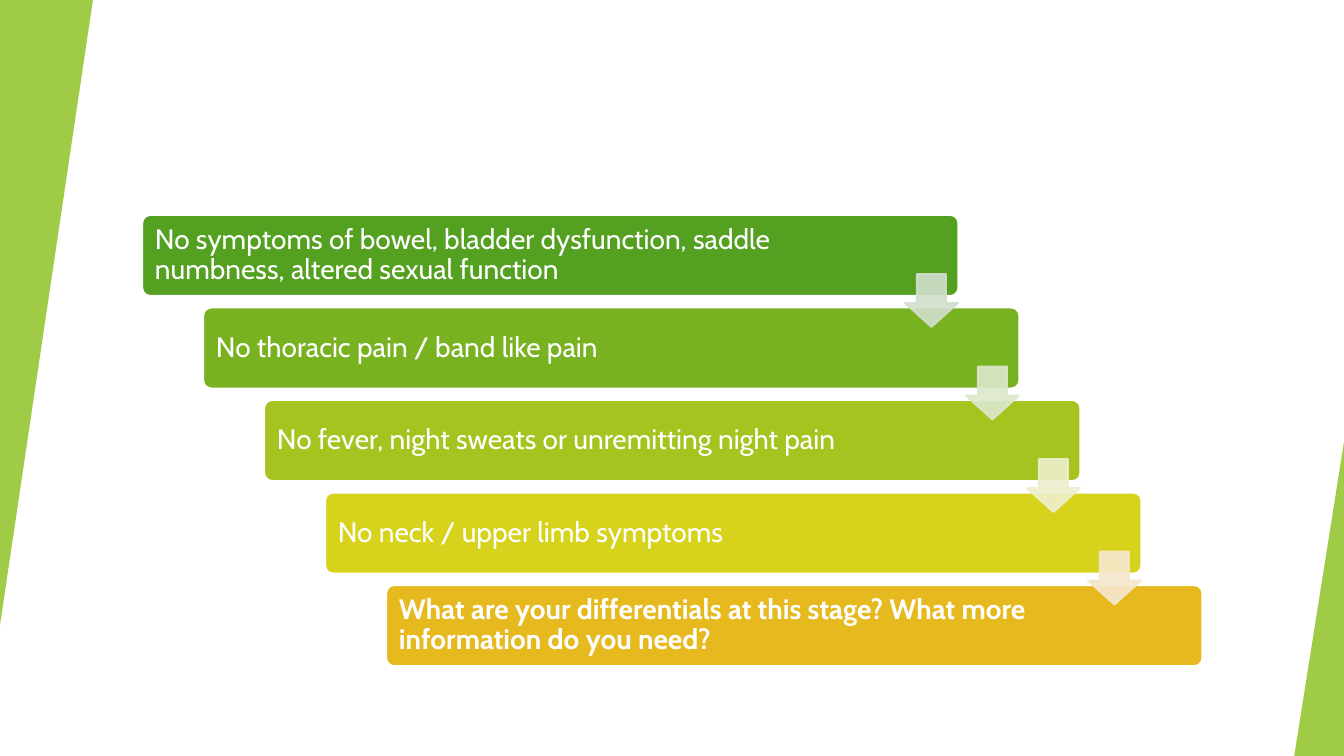
"""Build the slide of red-flag questions as a descending staircase of bars."""
from dataclasses import dataclass

from lxml import etree
from pptx import Presentation
from pptx import util as u
from pptx.dml.color import RGBColor
from pptx.enum import shapes, text
from pptx.oxml.ns import qn


@dataclass(frozen=True)
class Theme:
    """Colours, font and type size of the slide."""
    font: str = "Cabin"
    size: float = 20
    white: str = "FFFFFF"
    accent: str = "90C226"
    bars: tuple = ("54A021", "79B220", "A5C41F", "D7D31D", "E6B91E")
    arrows: tuple = ("D1DFCD", "DCE8CC", "EEEFCC", "F5E7CD")


def paint(fill, color, opacity=100):
    """Make a fill solid, with an opacity in percent."""
    fill.solid()
    fill.fore_color.rgb = RGBColor.from_string(color)
    if opacity < 100:
        for clr in fill._xPr.iterfind(f"{qn('a:solidFill')}/{qn('a:srgbClr')}"):
            etree.SubElement(clr, qn("a:alpha"), val=str(opacity * 1000))


def write(tf, content, *, font, size, color, bold=False, spacing=0.9):
    """Put one formatted paragraph into a text frame."""
    p = tf.paragraphs[0]
    p.alignment = text.PP_ALIGN.LEFT
    p.line_spacing = spacing
    r = p.add_run()
    r.text = content
    r.font.name, r.font.size, r.font.bold = font, u.Pt(size), bold
    r.font.color.rgb = RGBColor.from_string(color)


class Deck:
    """Holds the theme and the current slide, and draws its elements."""

    def __init__(self, prs, theme):
        self.theme = theme
        self.s = prs.slides.add_slide(prs.slide_layouts[6])

    def shape(self, kind, box, color, adj, opacity=100, line=None):
        """Add a preset shape with a fill and an optional outline."""
        sp = self.s.shapes.add_shape(kind, *map(u.Pt, box))
        sp.shadow.inherit = False
        for i, value in enumerate(adj):
            sp.adjustments[i] = value
        paint(sp.fill, color, opacity)
        if line:
            sp.line.width = u.Pt(1.5)
            paint(sp.line.fill, line, opacity)
        else:
            sp.line.fill.background()
        return sp

    def wedge(self, box, rotation=0):
        """Add a translucent right-angled triangle at a slide edge."""
        kind = shapes.MSO_SHAPE.ISOSCELES_TRIANGLE
        sp = self.shape(kind, box, self.theme.accent, [1], 85)
        sp.rotation = rotation

    def bar(self, box, color, content, bold):
        """Add a rounded bar with its text at the left."""
        t = self.theme
        kind = shapes.MSO_SHAPE.ROUNDED_RECTANGLE
        sp = self.shape(kind, box, color, [0.1], line=t.white)
        tf = sp.text_frame
        tf.word_wrap = True
        tf.vertical_anchor = text.MSO_ANCHOR.MIDDLE
        tf.margin_left, tf.margin_right = u.Pt(7.5), u.Pt(80)
        tf.margin_top = tf.margin_bottom = u.Pt(6)
        write(tf, content, font=t.font, size=t.size, color=t.white, bold=bold)

    def arrow(self, box, color):
        """Add a translucent arrow pointing down to the next bar."""
        kind = shapes.MSO_SHAPE.DOWN_ARROW
        self.shape(kind, box, color, [0.55, 0.45], 90, color)


def main():
    """Draw the slide and save it."""
    prs = Presentation()
    prs.slide_width, prs.slide_height = u.Pt(960), u.Pt(540)
    theme = Theme()
    deck = Deck(prs, theme)
    deck.wedge((0, 0, 66.4, 446.4), rotation=180)
    deck.wedge((924.5, 316, 35.5, 224))

    findings = (
        "No symptoms of bowel, bladder dysfunction, saddle numbness, altered sexual function",
        "No thoracic pain / band like pain",
        "No fever, night sweats or unremitting night pain",
        "No neck / upper limb symptoms",
        "What are your differentials at this stage? What more information do you need?",
    )
    steps = [(101.5 + 43.57 * i, 153.5 + 66.1 * i) for i in range(len(findings))]
    last = len(findings) - 1
    for i, ((x, y), color, content) in enumerate(zip(steps, theme.bars, findings)):
        deck.bar((x, y, 583.2, 58), color, content, bold=i == last)
    for (x, y), color in zip(steps, theme.arrows):
        deck.arrow((x + 545, y + 42.3, 37.7, 37.7), color)
    prs.save("out.pptx")


if __name__ == "__main__":
    main()
